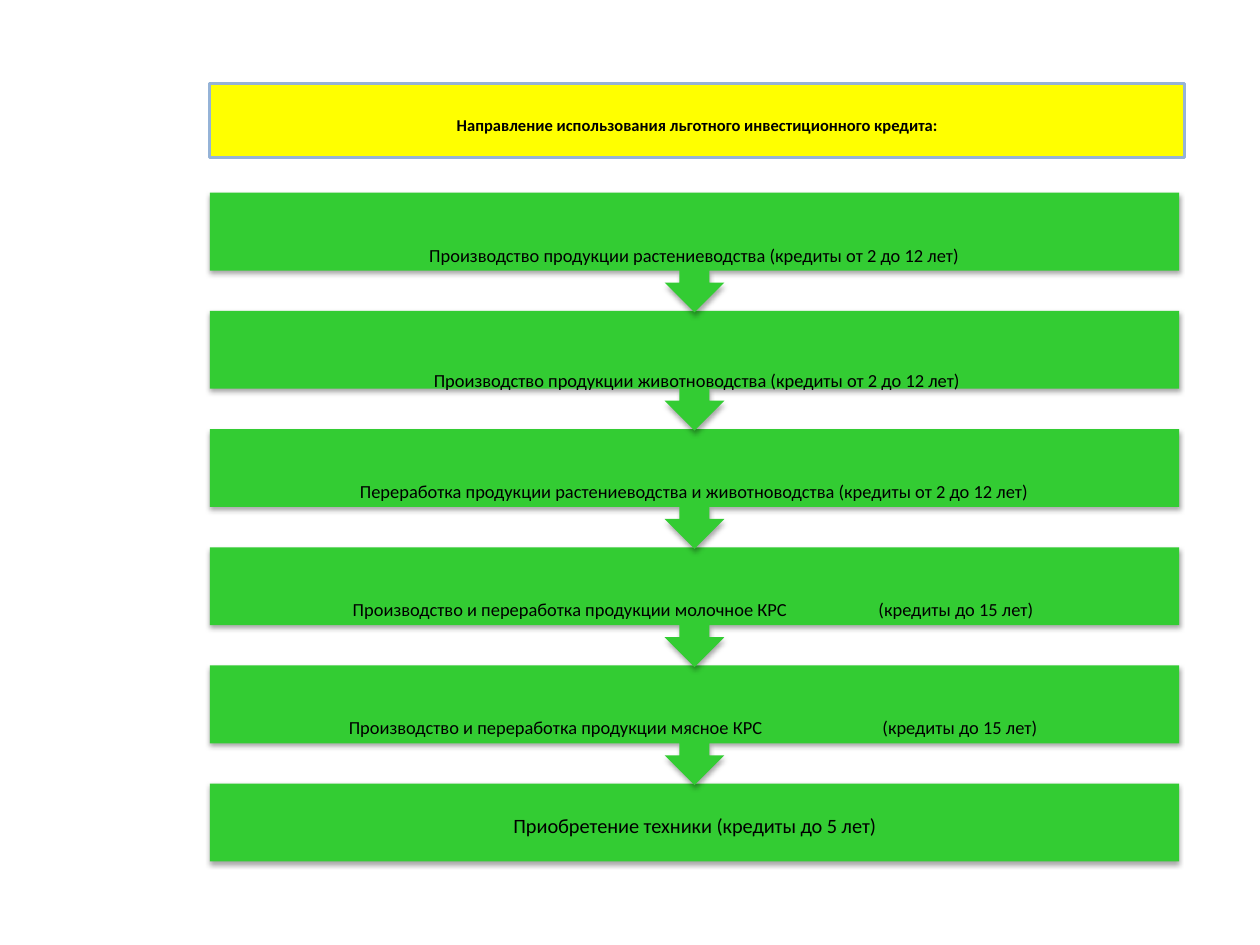
from dataclasses import dataclass

from lxml.etree import SubElement
from pptx import Presentation
from pptx.dml.color import RGBColor
from pptx.enum.shapes import MSO_SHAPE
from pptx.enum.text import MSO_ANCHOR, MSO_AUTO_SIZE, PP_ALIGN
from pptx.oxml.ns import qn
from pptx.util import Pt


@dataclass(frozen=True)
class Theme:
    font: str = "Calibri"
    text: RGBColor = RGBColor(0x00, 0x00, 0x00)
    step: RGBColor = RGBColor(0x33, 0xCC, 0x33)
    banner: RGBColor = RGBColor(0xFF, 0xFF, 0x00)
    banner_line: RGBColor = RGBColor(0x95, 0xB3, 0xD7)
    title_size: int = 18
    step_size: int = 20
    last_size: int = 22


THEME = Theme()

# Step column, in points
LEFT, TOP, WIDTH = 132.2, 121.4, 610.6
PITCH, CALLOUT_HEIGHT, BOX_HEIGHT = 74.45, 75.4, 49
INSET = 11.5


@dataclass(frozen=True)
class Step:
    text: str
    term: str = ""         # second part, placed at a tab stop
    indent: float = INSET  # left inset of the text
    tab: float = 0         # tab stop, measured from the inset
    drop: float = 0        # extra top inset


STEPS = [
    Step("Производство продукции растениеводства (кредиты от 2 до 12 лет)"),
    Step("Производство продукции животноводства (кредиты от 2 до 12 лет)",
         indent=15, drop=8.5),
    Step("Переработка продукции растениеводства и животноводства (кредиты от 2 до 12 лет)"),
    Step("Производство и переработка продукции молочное КРС",
         "(кредиты до 15 лет)", indent=90, tab=331.2),
    Step("Производство и переработка продукции мясное КРС",
         "(кредиты до 15 лет)", indent=87.5, tab=336.2),
    Step("Приобретение техники (кредиты до 5 лет)"),
]


def add_run(paragraph, text, size, bold=False):
    run = paragraph.add_run()
    run.text = text
    run.font.name = THEME.font
    run.font.size = Pt(size)
    run.font.bold = bold
    run.font.color.rgb = THEME.text
    # Slightly raised baseline
    run.font._element.set("baseline", "2000")


def add_shadow(shape):
    shape.shadow.inherit = False
    effects = shape._element.spPr.find(qn("a:effectLst"))
    shadow = SubElement(effects, qn("a:outerShdw"), blurRad=str(Pt(3.1)),
                        dist=str(Pt(1.8)), dir="5400000", rotWithShape="0")
    color = SubElement(shadow, qn("a:srgbClr"), val="000000")
    SubElement(color, qn("a:alpha"), val="35000")


def set_tab_stop(paragraph, position):
    stops = SubElement(paragraph._p.get_or_add_pPr(), qn("a:tabLst"))
    SubElement(stops, qn("a:tab"), pos=str(Pt(position)), algn="l")


def add_title(slide, text):
    title = slide.shapes.title
    title.left, title.top = Pt(LEFT), Pt(52.6)
    title.width, title.height = Pt(614.2), Pt(46.8)
    title.fill.solid()
    title.fill.fore_color.rgb = THEME.banner
    title.line.color.rgb = THEME.banner_line
    title.line.width = Pt(2)
    frame = title.text_frame
    frame.auto_size = MSO_AUTO_SIZE.NONE
    frame.vertical_anchor = MSO_ANCHOR.MIDDLE
    paragraph = frame.paragraphs[0]
    paragraph.alignment = PP_ALIGN.CENTER
    add_run(paragraph, text, THEME.title_size, bold=True)


def add_step_text(slide, step, top, height, size):
    text_box = slide.shapes.add_textbox(Pt(LEFT), Pt(top), Pt(WIDTH), Pt(height))
    frame = text_box.text_frame
    frame.word_wrap = True
    frame.auto_size = MSO_AUTO_SIZE.NONE
    frame.vertical_anchor = MSO_ANCHOR.MIDDLE
    frame.margin_left, frame.margin_right = Pt(step.indent), Pt(INSET)
    frame.margin_top, frame.margin_bottom = Pt(INSET + step.drop), Pt(INSET)
    paragraph = frame.paragraphs[0]
    paragraph.line_spacing = 0.9
    paragraph.alignment = PP_ALIGN.LEFT if step.term else PP_ALIGN.CENTER
    add_run(paragraph, step.text, size)
    if step.term:
        set_tab_stop(paragraph, step.tab)
        add_run(paragraph, "\t" + step.term, size)


def add_step(slide, step, top, is_last):
    kind = MSO_SHAPE.RECTANGLE if is_last else MSO_SHAPE.UP_ARROW_CALLOUT
    height = BOX_HEIGHT if is_last else CALLOUT_HEIGHT
    shape = slide.shapes.add_shape(kind, Pt(LEFT), Pt(top), Pt(WIDTH), Pt(height))
    shape.rotation = 0 if is_last else 180
    shape.fill.solid()
    shape.fill.fore_color.rgb = THEME.step
    shape.line.fill.background()
    add_shadow(shape)
    # Separate text stays upright over the turned callout
    size = THEME.last_size if is_last else THEME.step_size
    add_step_text(slide, step, top, height, size)


def main():
    presentation = Presentation()
    presentation.slide_width = Pt(793.75)
    presentation.slide_height = Pt(595.25)
    slide = presentation.slides.add_slide(presentation.slide_layouts[5])

    add_title(slide, "Направление использования льготного инвестиционного кредита:")

    # Bottom step first, so each arrow lies over the next step
    last = len(STEPS) - 1
    for index, step in reversed(list(enumerate(STEPS))):
        add_step(slide, step, TOP + index * PITCH, index == last)

    presentation.save("out.pptx")


if __name__ == "__main__":
    main()
